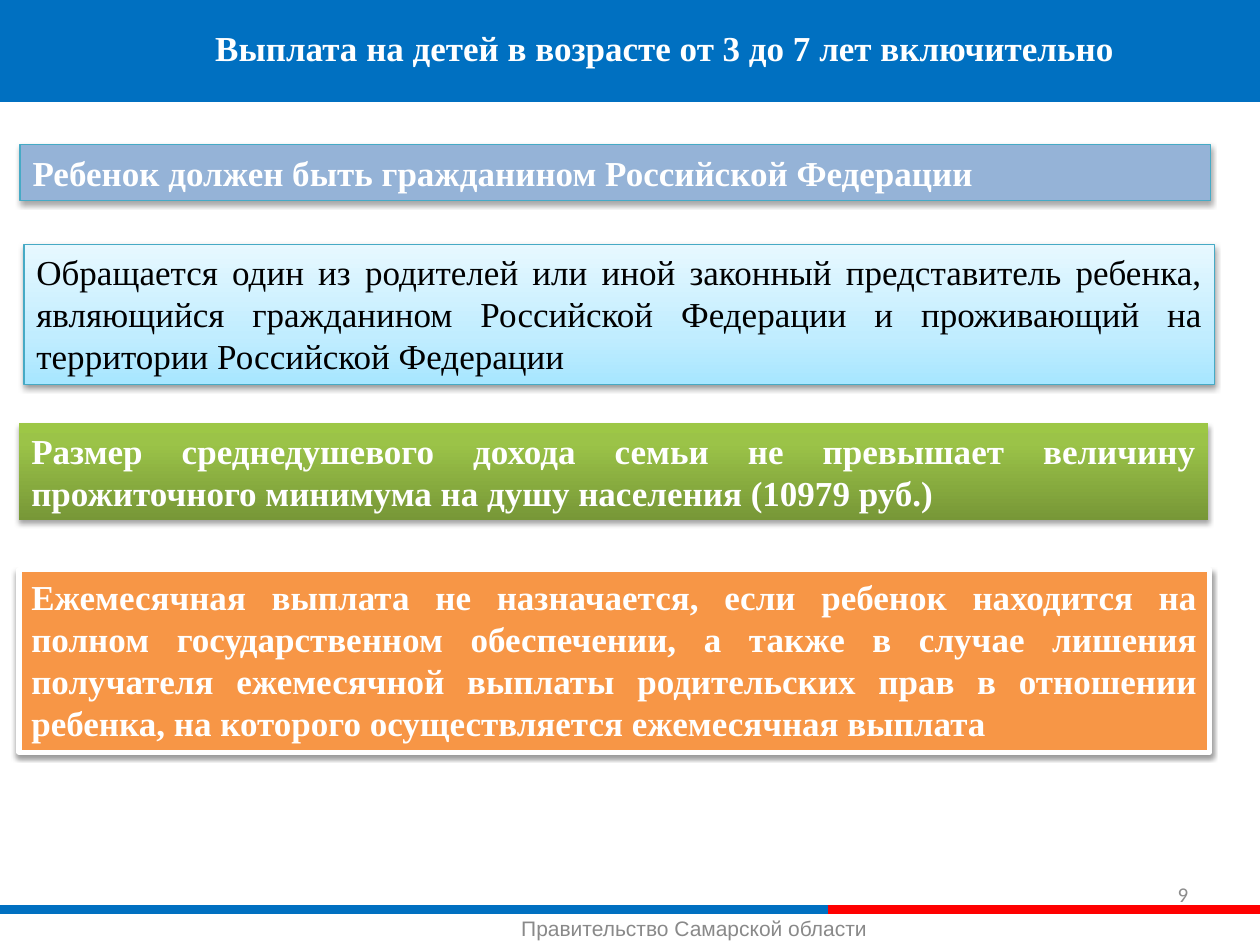
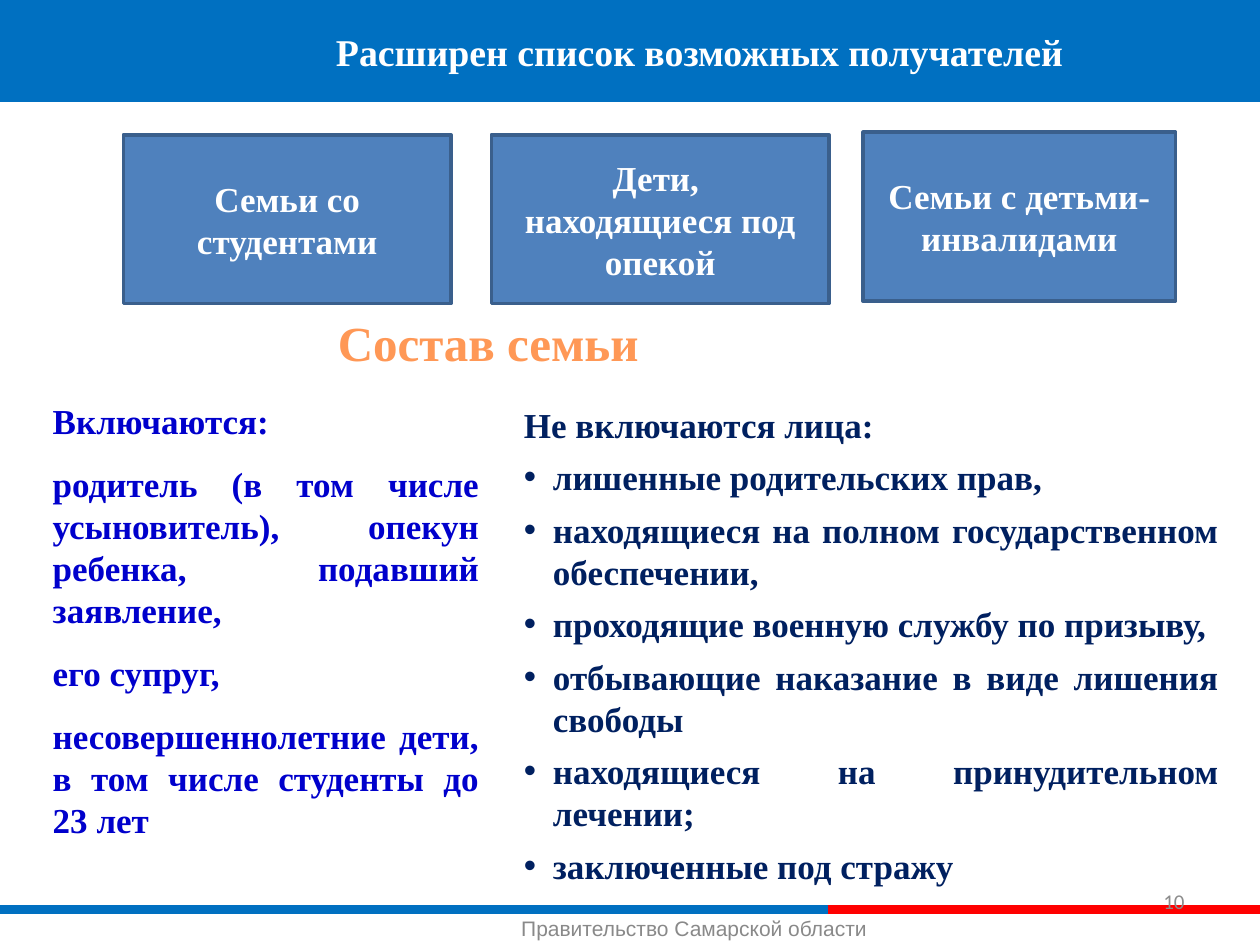
from dataclasses import dataclass

from lxml.etree import SubElement
from pptx import Presentation
from pptx.dml.color import RGBColor
from pptx.dml.fill import FillFormat
from pptx.enum.shapes import MSO_CONNECTOR as Connector, MSO_SHAPE as Preset
from pptx.enum.text import MSO_ANCHOR as Anchor, PP_ALIGN as Align
from pptx.oxml.ns import qn
from pptx.slide import Slide
from pptx.util import Emu, Pt

EMU_PER_PX = 9144
SERIF = "Times New Roman"

COLOURS = {
    "white": "FFFFFF",
    "black": "000000",
    "band": "0070C1",
    "red": "FF0000",
    "footer": "898989",
    "number": "8C8C8C",
    "steel": "95B3D7",
    "teal": "46AAC5",
    "orange": "F79646",
    "card": "4F81BD",
    "card_edge": "3A5F8C",
    "included": "0000CC",
    "excluded": "002060",
    "sky_deep": "A7E6FF",
    "sky_mid": "C1EDFF",
    "sky_pale": "E7F8FF",
    "leaf_deep": "779737",
    "leaf_mid": "9BC348",
    "leaf_pale": "9DC746",
    "rust": "9D4700",
    "apricot": "FF9856",
    "cream": "FFF5F1",
}


@dataclass(frozen=True)
class Gradient:
    stops: tuple[tuple[int, str], ...]
    angle: int


GRADIENTS = {
    "sky": Gradient(((0, "sky_deep"), (35, "sky_mid"), (100, "sky_pale")), 90),
    "leaf": Gradient(((0, "leaf_deep"), (80, "leaf_mid"), (100, "leaf_pale")), 90),
    "sunset": Gradient(((0, "rust"), (78, "apricot"), (100, "cream")), 270),
}


@dataclass(frozen=True)
class Shadow:
    opacity: int
    distance: float


SOFT = Shadow(35, 1.8)
DENSE = Shadow(38, 1.6)


@dataclass(frozen=True)
class Box:
    at: tuple[int, int, int, int]
    paras: tuple[str, ...] = ()
    fill: str | None = None
    edge: str | None = None
    edge_width: float = 0.75
    shadow: Shadow | None = None
    font: str = SERIF
    size: float = 20
    bold: bool = True
    colour: str = "white"
    align: Align = Align.LEFT
    anchor: Anchor = Anchor.TOP
    inset: tuple[int, int] = (10, 5)
    before: int = 0
    after: int = 0
    first_indent: int = 0
    bullet_indent: int = 0


def px(length: int) -> Emu:
    return Emu(length * EMU_PER_PX)


def rgb(name: str) -> RGBColor:
    return RGBColor.from_string(COLOURS[name])


def paint(fill: FillFormat, name: str, owner) -> None:
    if name not in GRADIENTS:
        fill.solid()
        fill.fore_color.rgb = rgb(name)
        return
    gradient = GRADIENTS[name]
    fill.gradient()
    fill.gradient_angle = gradient.angle
    stop_list = next(owner.iter(qn("a:gsLst")))
    for stop in list(stop_list):
        stop_list.remove(stop)
    for position, colour in gradient.stops:
        stop = SubElement(stop_list, qn("a:gs"), pos=str(position * 1000))
        SubElement(stop, qn("a:srgbClr"), val=COLOURS[colour])


def cast_shadow(shape, shadow: Shadow) -> None:
    effects = shape._element.spPr.find(qn("a:effectLst"))
    outer = SubElement(
        effects,
        qn("a:outerShdw"),
        blurRad=str(Pt(3.1)),
        dist=str(Pt(shadow.distance)),
        dir="5400000",
        rotWithShape="0",
    )
    colour = SubElement(outer, qn("a:srgbClr"), val=COLOURS["black"])
    SubElement(colour, qn("a:alpha"), val=str(shadow.opacity * 1000))


def write_paras(frame, box: Box) -> None:
    for index, text in enumerate(box.paras):
        para = frame.paragraphs[0] if index == 0 else frame.add_paragraph()
        span = para.add_run()
        span.text = text
        para.alignment = box.align
        if index and box.before:
            para.space_before = Pt(box.before)
        if box.after:
            para.space_after = Pt(box.after)
        properties = para._p.get_or_add_pPr()
        if box.first_indent:
            properties.set("indent", str(px(box.first_indent)))
        if index and box.bullet_indent:
            properties.set("marL", str(px(box.bullet_indent)))
            properties.set("indent", str(px(-box.bullet_indent)))
            SubElement(properties, qn("a:buFont"), typeface="Arial")
            SubElement(properties, qn("a:buChar"), char="•")
        font = para.font
        font.name = box.font
        font.size = Pt(box.size)
        font.bold = box.bold
        target = span.font if box.colour in GRADIENTS else font
        paint(target.fill, box.colour, para._p)


def draw_box(page: Slide, box: Box) -> None:
    bounds = [px(length) for length in box.at]
    if box.fill:
        shape = page.shapes.add_shape(Preset.RECTANGLE, *bounds)
        shape.shadow.inherit = False
        paint(shape.fill, box.fill, shape._element)
        if box.edge:
            shape.line.color.rgb = rgb(box.edge)
            shape.line.width = Pt(box.edge_width)
        else:
            shape.line.fill.background()
        if box.shadow:
            cast_shadow(shape, box.shadow)
    else:
        shape = page.shapes.add_textbox(*bounds)
    frame = shape.text_frame
    frame.word_wrap = True
    frame.vertical_anchor = box.anchor
    frame.margin_left = frame.margin_right = px(box.inset[0])
    frame.margin_top = frame.margin_bottom = px(box.inset[1])
    write_paras(frame, box)


def draw_stripe(page: Slide, left: int, right: int, colour: str) -> None:
    stripe = page.shapes.add_connector(
        Connector.STRAIGHT, px(left), px(722), px(right), px(722)
    )
    stripe.line.color.rgb = rgb(colour)
    stripe.line.width = Pt(5)
    SubElement(stripe._element.spPr, qn("a:effectLst"))


def add_page(deck, title: Box, number: Box, content: list[Box]) -> None:
    page = deck.slides.add_slide(deck.slide_layouts[6])
    draw_stripe(page, 0, 657, "band")
    draw_box(page, FOOTER)
    draw_stripe(page, 657, 1000, "red")
    for box in (TITLE_BAND, title, number, *content):
        draw_box(page, box)


def title_box(at: tuple[int, int, int, int], text: str, size: float, indent: int = 0) -> Box:
    return Box(at, (text,), size=size, align=Align.CENTER, anchor=Anchor.MIDDLE,
               first_indent=indent)


def number_box(left: int, top: int, text: str) -> Box:
    return Box((left, top, 233, 40), (text,), font="Calibri", size=12, bold=False,
               colour="number", align=Align.RIGHT, anchor=Anchor.MIDDLE)


def card_box(left: int, top: int, width: int, *paras: str) -> Box:
    return Box((left, top, width, 134), paras, fill="card", edge="card_edge",
               edge_width=2, align=Align.CENTER, anchor=Anchor.MIDDLE)


TITLE_BAND = Box((0, -3, 1000, 84), fill="band")
FOOTER = Box((224, 722, 654, 30), ("Правительство Самарской области",), font="Arial",
             size=12, bold=False, colour="footer", align=Align.CENTER, inset=(5, 5))

CONDITIONS = [
    Box((16, 115, 945, 44), ("Ребенок должен быть гражданином Российской Федерации",),
        fill="steel", edge="teal", shadow=SOFT),
    Box((19, 194, 945, 111),
        ("Обращается один из родителей или иной законный представитель ребенка, "
         "являющийся гражданином Российской Федерации и проживающий на территории "
         "Российской Федерации",),
        fill="sky", edge="teal", shadow=DENSE, bold=False, colour="black",
        align=Align.JUSTIFY),
    Box((15, 336, 944, 77),
        ("Размер среднедушевого дохода семьи не превышает величину прожиточного "
         "минимума на душу населения (10979 руб.)",),
        fill="leaf", shadow=SOFT, align=Align.JUSTIFY),
    Box((15, 452, 945, 145),
        ("Ежемесячная выплата не назначается, если ребенок находится на полном "
         "государственном обеспечении, а также в случае лишения получателя "
         "ежемесячной выплаты родительских прав в отношении ребенка, на которого "
         "осуществляется ежемесячная выплата",),
        fill="orange", edge="white", edge_width=3, shadow=DENSE, align=Align.JUSTIFY),
]

RECIPIENTS = [
    card_box(98, 107, 260, "Семьи со студентами"),
    card_box(390, 107, 268, "Дети, ", "находящиеся под опекой"),
    card_box(685, 105, 248, "Семьи с детьми-инвалидами"),
    Box((224, 243, 327, 57), ("Состав семьи",), size=28, colour="sunset",
        align=Align.CENTER),
    Box((32, 312, 358, 364),
        ("Включаются:",
         "родитель (в том числе усыновитель), опекун ребенка, подавший заявление, ",
         "его супруг, ",
         "несовершеннолетние дети, в том числе студенты до 23 лет"),
        colour="included", align=Align.JUSTIFY, before=6, after=6),
    Box((406, 315, 571, 397),
        ("Не включаются лица:",
         "лишенные родительских прав, ",
         "находящиеся на полном государственном обеспечении,",
         "проходящие военную службу по призыву, ",
         "отбывающие наказание в виде лишения свободы",
         "находящиеся на принудительном лечении;",
         "заключенные под стражу"),
        colour="excluded", align=Align.JUSTIFY, before=6, bullet_indent=23),
]


def main() -> None:
    deck = Presentation()
    deck.slide_width, deck.slide_height = px(1000), px(750)
    add_page(
        deck,
        title_box((130, -3, 795, 81),
                  "Выплата на детей в возрасте от 3 до 7 лет включительно", 20),
        number_box(720, 690, "9"),
        CONDITIONS,
    )
    add_page(
        deck,
        title_box((92, 21, 885, 39), "Расширен список возможных получателей ", 21.6, 49),
        number_box(717, 695, "10"),
        RECIPIENTS,
    )
    deck.save("out.pptx")


if __name__ == "__main__":
    main()
